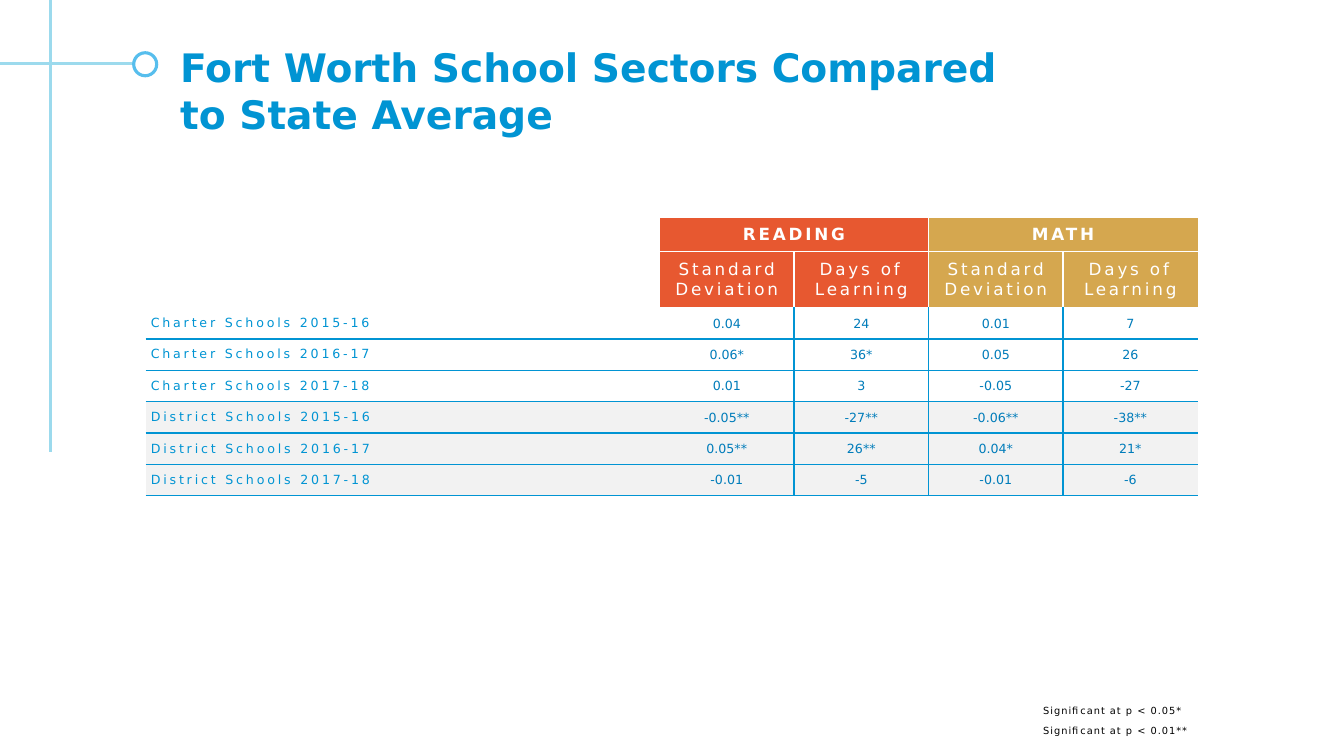
from lxml import etree
from pptx import Presentation
from pptx.dml.color import RGBColor
from pptx.enum.shapes import MSO_CONNECTOR, MSO_SHAPE
from pptx.enum.text import MSO_ANCHOR, PP_ALIGN
from pptx.oxml.ns import qn
from pptx.util import Cm, Pt

WHITE = RGBColor(0xFF, 0xFF, 0xFF)
BLACK = RGBColor(0, 0, 0)
BLUE = RGBColor(0x01, 0x94, 0xD3)
DEEP_BLUE = RGBColor(0x00, 0x7C, 0xBA)
PALE_BLUE = RGBColor(0x9C, 0xDA, 0xED)
RING_BLUE = RGBColor(0x57, 0xBE, 0xED)
ORANGE = RGBColor(0xE7, 0x58, 0x30)
GOLD = RGBColor(0xD5, 0xA7, 0x4F)
GREY = RGBColor(0xF2, 0xF2, 0xF2)

NO_STYLE = "{2D5ABB26-0587-4C30-8999-92F81FD0307C}"
COL_WIDTHS = [12.95] + [3.39] * 4
ROW_HEIGHTS = [0.84, 1.41] + [0.79] * 9
SUBJECTS = [("READING", ORANGE), ("MATH", GOLD)]
MEASURES = ["Standard\nDeviation", "Days of Learning"]
RESULTS = [
    ("Charter Schools 2015-16", "0.04", "24", "0.01", "7"),
    ("Charter Schools 2016-17", "0.06*", "36*", "0.05", "26"),
    ("Charter Schools 2017-18", "0.01", "3", "-0.05", "-27"),
    ("District Schools 2015-16", "-0.05**", "-27**", "-0.06**", "-38**"),
    ("District Schools 2016-17", "0.05**", "26**", "0.04*", "21*"),
    ("District Schools 2017-18", "-0.01", "-5", "-0.01", "-6"),
]


class SlideBuilder:
    font = "DejaVu Sans"

    def __init__(self, slide):
        self.slide = slide

    def style(self, p, size, color, bold=False, spacing=0, align=PP_ALIGN.LEFT):
        """Format a paragraph and its runs; spacing is in points."""
        p.alignment = align
        for r in p.runs:
            r.font.name = self.font
            r.font.size = Pt(size)
            r.font.bold = bold
            r.font.color.rgb = color
            if spacing:
                r._r.get_or_add_rPr().set("spc", str(int(spacing * 100)))

    def line(self, x1, y1, x2, y2, color, width):
        ln = self.slide.shapes.add_connector(
            MSO_CONNECTOR.STRAIGHT, Cm(x1), Cm(y1), Cm(x2), Cm(y2))
        ln.line.color.rgb = color
        ln.line.width = Pt(width)
        etree.SubElement(ln._element.spPr, qn("a:effectLst"))

    def ring(self, x, y, size, color, width):
        sp = self.slide.shapes.add_shape(
            MSO_SHAPE.OVAL, Cm(x), Cm(y), Cm(size), Cm(size))
        sp.shadow.inherit = False
        sp.fill.solid()
        sp.fill.fore_color.rgb = WHITE
        sp.line.color.rgb = color
        sp.line.width = Pt(width)

    def text(self, x, y, w, h, text, after=0, hanging=0, **style):
        tf = self.slide.shapes.add_textbox(Cm(x), Cm(y), Cm(w), Cm(h)).text_frame
        tf.word_wrap = True
        tf.text = text
        for p in tf.paragraphs:
            p.space_after = Pt(after)
            if hanging:
                pPr = p._p.get_or_add_pPr()
                pPr.set("marL", str(Cm(hanging)))
                pPr.set("indent", str(-Cm(hanging)))
            self.style(p, **style)

    def table(self, x, y, col_widths, row_heights):
        frame = self.slide.shapes.add_table(
            len(row_heights), len(col_widths), Cm(x), Cm(y),
            Cm(sum(col_widths)), Cm(sum(row_heights)))
        table = frame.table
        table.first_row = table.horz_banding = False
        table._tbl.tblPr.find(qn("a:tableStyleId")).text = NO_STYLE
        for col, width in zip(table.columns, col_widths):
            col.width = Cm(width)
        for row, height in zip(table.rows, row_heights):
            row.height = Cm(height)
        for cell in table.iter_cells():
            cell.fill.background()
            # keeps empty cells from stretching their rows
            etree.SubElement(cell.text_frame.paragraphs[0]._p,
                             qn("a:endParaRPr"), sz="900")
        return table

    def cell(self, cell, text, margins, fill=None, sides="", border=WHITE, **style):
        """Fill one cell; sides lists its bordered edges in the order LRTB."""
        cell.text = text
        cell.vertical_anchor = MSO_ANCHOR.MIDDLE
        (cell.margin_left, cell.margin_top,
         cell.margin_right, cell.margin_bottom) = map(Cm, margins)
        for p in cell.text_frame.paragraphs:
            self.style(p, **style)
        tcPr = cell._tc.get_or_add_tcPr()
        for i, side in enumerate(sides):
            ln = etree.Element(qn(f"a:ln{side}"), w=str(Pt(1)))
            solid = etree.SubElement(ln, qn("a:solidFill"))
            etree.SubElement(solid, qn("a:srgbClr"), val=str(border))
            tcPr.insert(i, ln)
        if fill is not None:
            cell.fill.solid()
            cell.fill.fore_color.rgb = fill


def fill_results(builder, table):
    wide, tight = (0.13, 0.08, 0.13, 0.08), (0.03, 0.03, 0.03, 0)
    header = dict(size=12, color=WHITE, spacing=2, align=PP_ALIGN.CENTER)
    table.cell(0, 0).merge(table.cell(1, 0))
    for i, (subject, color) in enumerate(SUBJECTS):
        first = 1 + 2 * i
        table.cell(0, first).merge(table.cell(0, first + 1))
        builder.cell(table.cell(0, first), subject, wide, color,
                     "LB" if i else "RB", bold=True, **header)
        for c, measure in enumerate(MEASURES, first):
            sides = ("L" if c > 1 else "") + ("R" if c < 4 else "") + "T"
            builder.cell(table.cell(1, c), measure, wide, color, sides, **header)

    for r, (school, *values) in enumerate(RESULTS, 2):
        fill = GREY if school.startswith("District") else None
        level = "TB" if r > 2 else "B"
        builder.cell(table.cell(r, 0), school, wide, fill, level, BLUE,
                     size=9, color=BLUE, spacing=2)
        for c, value in enumerate(values, 1):
            sides = ("L" if c > 1 else "") + ("R" if c < 4 else "") + level
            builder.cell(table.cell(r, c), value, tight, fill, sides, BLUE,
                         size=9, color=DEEP_BLUE, align=PP_ALIGN.CENTER)


def main():
    prs = Presentation()
    prs.slide_width, prs.slide_height = Cm(33.87), Cm(19.05)
    builder = SlideBuilder(prs.slides.add_slide(prs.slide_layouts[6]))

    builder.line(1.27, 0, 1.27, 11.4, PALE_BLUE, 2.25)
    builder.line(3.38, 1.61, 0, 1.61, PALE_BLUE, 2.25)
    builder.ring(3.37, 1.33, 0.58, RING_BLUE, 2.25)
    builder.text(4.29, 0.97, 28.8, 1.42,
                 "Fort Worth School Sectors Compared\vto State Average",
                 size=28, color=BLUE, bold=True)
    builder.text(26.04, 17.63, 4.65, 1.42,
                 "Significant at p < 0.05*\nSignificant at p < 0.01**",
                 after=6, hanging=0.64, size=7, color=BLACK, spacing=0.75)
    fill_results(builder, builder.table(3.67, 5.5, COL_WIDTHS, ROW_HEIGHTS))
    prs.save("out.pptx")


if __name__ == "__main__":
    main()
